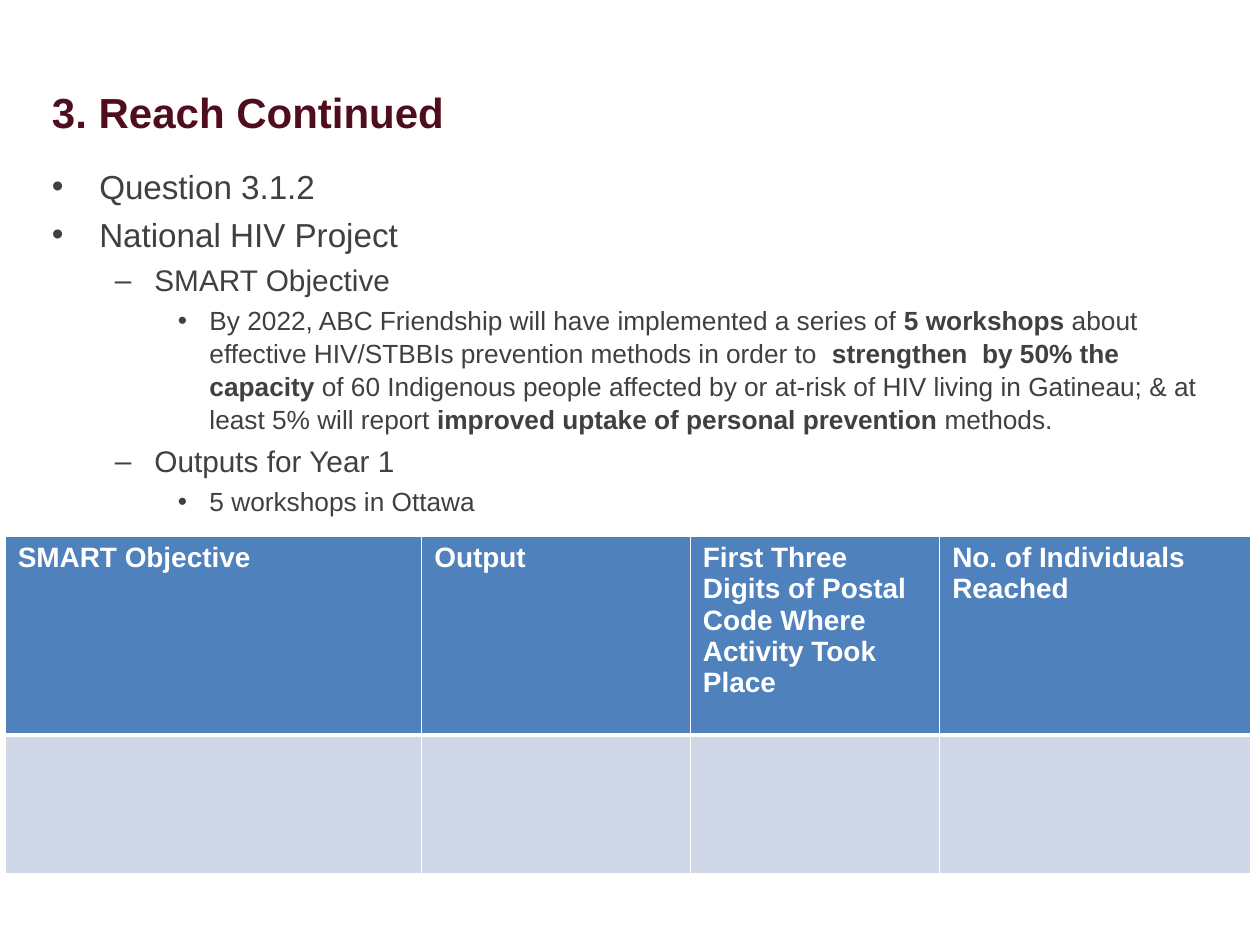
from pptx import Presentation
from pptx.dml.color import RGBColor
from pptx.enum.text import MSO_ANCHOR, MSO_AUTO_SIZE, PP_ALIGN
from pptx.oxml.xmlchemy import OxmlElement
from pptx.util import Pt

# Bullet, left margin, hanging indent and text size of each list level
LEVELS = [("•", 27, 27, 19), ("–", 58.5, 22.5, 17), ("•", 90, 18, 15)]

# Level and runs; every second run is bold
OUTLINE = [
    (0, ["Question 3.1.2"]),
    (0, ["National HIV Project"]),
    (1, ["SMART Objective"]),
    (2, ["By 2022, ABC Friendship will have implemented a series of ",
         "5 workshops ",
         "about effective HIV/STBBIs prevention methods in order to  ",
         "strengthen  by 50% the capacity ",
         "of 60 Indigenous people affected by or at-risk of HIV living in "
         "Gatineau; & at least 5% will report ",
         "improved uptake of personal prevention ",
         "methods."]),
    (1, ["Outputs for Year 1"]),
    (2, ["5 workshops in Ottawa"]),
]

COLUMNS = [
    ("SMART Objective", 238),
    ("Output", 153.5),
    ("First Three Digits of Postal Code Where Activity Took Place", 142.5),
    ("No. of Individuals Reached", 178),
]


def color(value):
    return RGBColor.from_string(value)


def add_text(paragraph, text, size=15, fill="404040", bold=False):
    run = paragraph.add_run()
    run.text = text
    run.font.name = "Arial"
    run.font.size = Pt(size)
    run.font.bold = bold
    run.font.color.rgb = color(fill)


def place(shape, left, top, width, height):
    shape.left, shape.top = Pt(left), Pt(top)
    shape.width, shape.height = Pt(width), Pt(height)


def set_bullet(paragraph, character, margin, hanging):
    properties = paragraph._p.get_or_add_pPr()
    properties.set("marL", str(Pt(margin)))
    properties.set("indent", str(-Pt(hanging)))
    bullet = OxmlElement("a:buChar")
    bullet.set("char", character)
    properties.append(bullet)


def set_border(cell, side, width):
    line = OxmlElement(f"a:ln{side}")
    line.set("w", str(Pt(width)))
    solid = OxmlElement("a:solidFill")
    white = OxmlElement("a:srgbClr")
    white.set("val", "FFFFFF")
    solid.append(white)
    line.append(solid)
    cell._tc.get_or_add_tcPr().append(line)


def add_title(slide, left, top, width, height):
    title = slide.shapes.title
    place(title, left, top, width, height)
    frame = title.text_frame
    frame.auto_size = MSO_AUTO_SIZE.NONE
    frame.vertical_anchor = MSO_ANCHOR.BOTTOM
    paragraph = frame.paragraphs[0]
    paragraph.alignment = PP_ALIGN.LEFT
    add_text(paragraph, "3. Reach Continued", size=24, fill="4F0D1E", bold=True)


def add_outline(slide, left, top, width, height):
    body = slide.placeholders[1]
    place(body, left, top, width, height)
    frame = body.text_frame
    frame.auto_size = MSO_AUTO_SIZE.NONE
    for index, (level, runs) in enumerate(OUTLINE):
        paragraph = frame.add_paragraph() if index else frame.paragraphs[0]
        character, margin, hanging, size = LEVELS[level]
        paragraph.level = level
        paragraph.line_spacing = 1.05
        paragraph.space_before = Pt(0.2 * size if index else 0)
        set_bullet(paragraph, character, margin, hanging)
        for number, text in enumerate(runs):
            add_text(paragraph, text, size=size, bold=number % 2 == 1)


def add_reach_table(slide, left, top, header_height, row_height):
    width = sum(column_width for _, column_width in COLUMNS)
    table = slide.shapes.add_table(
        2, len(COLUMNS), Pt(left), Pt(top), Pt(width),
        Pt(header_height + row_height)).table
    table.rows[0].height = Pt(header_height)
    table.rows[1].height = Pt(row_height)
    for index, (heading, column_width) in enumerate(COLUMNS):
        table.columns[index].width = Pt(column_width)
        header, empty = table.cell(0, index), table.cell(1, index)
        add_text(header.text_frame.paragraphs[0], heading,
                 size=16, fill="FFFFFF", bold=True)
        for cell, fill, top_line, bottom_line in (
                (header, "4F81BD", 1, 3), (empty, "D0D8E8", 3, 1)):
            for side, line in zip("LRTB", (1, 1, top_line, bottom_line)):
                set_border(cell, side, line)
            cell.fill.solid()
            cell.fill.fore_color.rgb = color(fill)


def main():
    presentation = Presentation()
    presentation.slide_width, presentation.slide_height = Pt(720), Pt(540)
    slide = presentation.slides.add_slide(presentation.slide_layouts[1])
    add_title(slide, 22.5, 21.5, 676, 60.5)
    add_outline(slide, 22.5, 90, 676, 385)
    add_reach_table(slide, 3, 306.5, 113.5, 79.5)
    presentation.save("out.pptx")


if __name__ == "__main__":
    main()
